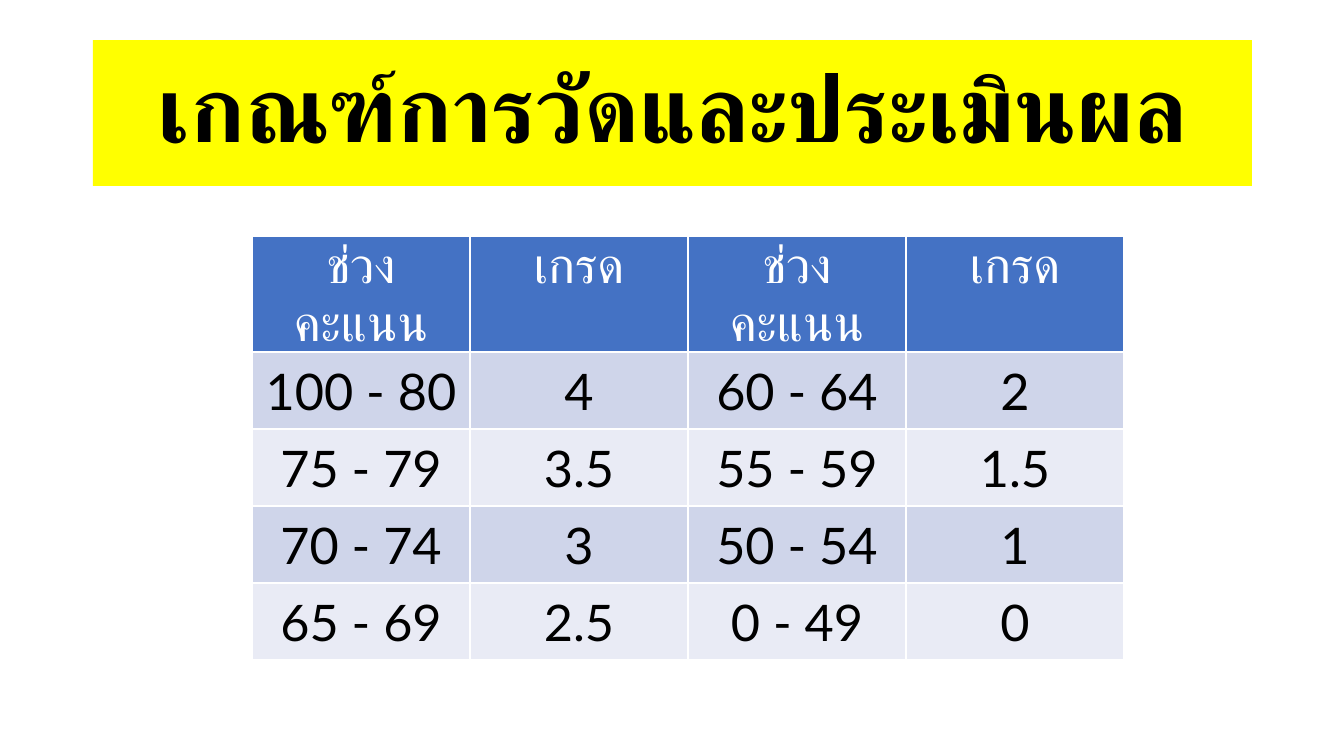
import pptx
import pptx.util
import pptx.dml.color
import pptx.enum.lang
import pptx.enum.shapes
import pptx.enum.text
import pptx.oxml
import pptx.oxml.ns

# Content
TITLE = "เกณฑ์การวัดและประเมินผล"
GRADES = [
    ("ช่วงคะแนน", "เกรด", "ช่วงคะแนน", "เกรด"),
    ("100 - 80", "4", "60 - 64", "2"),
    ("75 - 79", "3.5", "55 - 59", "1.5"),
    ("70 - 74", "3", "50 - 54", "1"),
    ("65 - 69", "2.5", "0 - 49", "0"),
]

# Layout in px
SLIDE_SIZE = (1344, 756)
TITLE_BOX = (93, 40, 1159, 146)
TABLE_LEFT, TABLE_TOP = 252, 236
COLUMN_WIDTH = 218
HEADER_HEIGHT, ROW_HEIGHT = 116, 77
HEADER_MARGIN, CELL_MARGIN = 14, 7

# Colours
YELLOW = pptx.dml.color.RGBColor(0xFF, 0xFF, 0x00)
BLACK = pptx.dml.color.RGBColor(0x00, 0x00, 0x00)
WHITE = pptx.dml.color.RGBColor(0xFF, 0xFF, 0xFF)
BLUE = pptx.dml.color.RGBColor(0x44, 0x72, 0xC4)
BANDS = [
    pptx.dml.color.RGBColor(0xE9, 0xEB, 0xF5),
    pptx.dml.color.RGBColor(0xCF, 0xD5, 0xEA),
]


def px(length):
    return pptx.util.Emu(round(length * 914400 / 100.8))


def write(text_frame, text, font_name, size, color, line_spacing, bold=False):
    text_frame.text = text
    paragraph = text_frame.paragraphs[0]
    paragraph.alignment = pptx.enum.text.PP_ALIGN.CENTER
    paragraph.line_spacing = line_spacing
    font = paragraph.runs[0].font
    font.language_id = pptx.enum.lang.MSO_LANGUAGE_ID.THAI
    font.name = font_name
    font.size = pptx.util.Pt(size)
    font.bold = bold
    font.color.rgb = color


def add_borders(cell):
    properties = cell._tc.get_or_add_tcPr()
    for position, side in enumerate(("lnL", "lnR", "lnT", "lnB")):
        border = pptx.oxml.parse_xml(
            f'<a:{side} {pptx.oxml.ns.nsdecls("a")} w="{pptx.util.Pt(1)}">'
            f'<a:solidFill><a:srgbClr val="{WHITE}"/></a:solidFill></a:{side}>'
        )
        properties.insert(position, border)


presentation = pptx.Presentation()
presentation.slide_width, presentation.slide_height = map(px, SLIDE_SIZE)
slide = presentation.slides.add_slide(presentation.slide_layouts[6])

# Title band
title = slide.shapes.add_shape(
    pptx.enum.shapes.MSO_SHAPE.RECTANGLE, *map(px, TITLE_BOX)
)
title.shadow.inherit = False
title.fill.solid()
title.fill.fore_color.rgb = YELLOW
title.line.fill.background()
title.text_frame.word_wrap = True
title.text_frame.vertical_anchor = pptx.enum.text.MSO_ANCHOR.MIDDLE
write(title.text_frame, TITLE, "Calibri", 66, BLACK, 0.9, bold=True)

# Grade table
row_count, column_count = len(GRADES), len(GRADES[0])
row_heights = [HEADER_HEIGHT] + [ROW_HEIGHT] * (row_count - 1)
table = slide.shapes.add_table(
    row_count, column_count, px(TABLE_LEFT), px(TABLE_TOP),
    px(column_count * COLUMN_WIDTH), px(sum(row_heights)),
).table
table.first_row = False
table.horz_banding = False
for column in table.columns:
    column.width = px(COLUMN_WIDTH)
for row, height in zip(table.rows, row_heights):
    row.height = px(height)

for row_index, values in enumerate(GRADES):
    is_header = row_index == 0
    margin = HEADER_MARGIN if is_header else CELL_MARGIN
    for column_index, value in enumerate(values):
        cell = table.cell(row_index, column_index)
        cell.margin_left = cell.margin_right = px(margin)
        cell.margin_top = cell.margin_bottom = 0
        cell.fill.solid()
        cell.fill.fore_color.rgb = BLUE if is_header else BANDS[row_index % 2]
        add_borders(cell)
        write(
            cell.text_frame, value, "Calibri" if is_header else "Lato", 36,
            WHITE if is_header else BLACK, 1.15,
        )

presentation.save("out.pptx")
